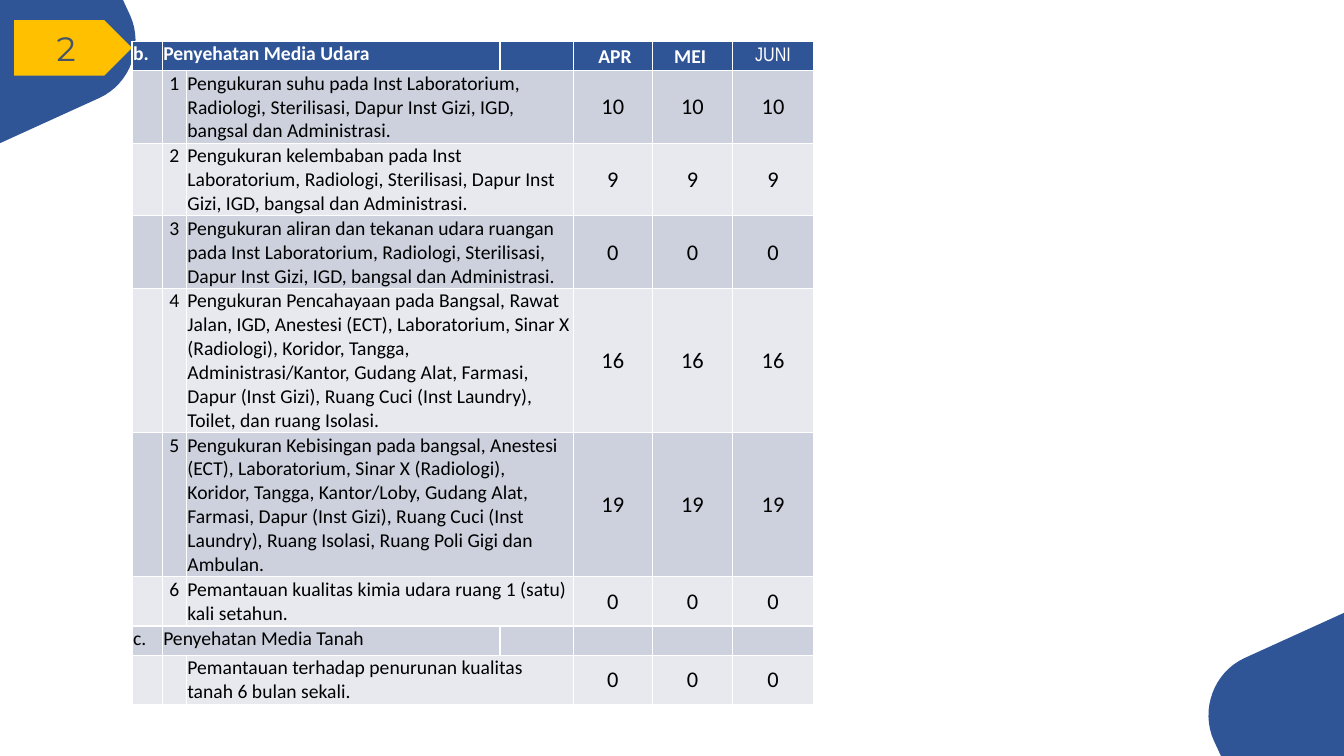
"""Build the slide with the April to June table of air and soil health measurements."""
from dataclasses import dataclass
from typing import Optional

from lxml import etree
from pptx import Presentation, util as u
from pptx.dml.color import RGBColor
from pptx.enum import shapes, text
from pptx.oxml import ns

GRID_COLUMNS, GRID_ROWS = 160, 90
CELL = u.Inches(1) // 12


@dataclass(frozen=True)
class Theme:
    blue: str = "2F5597"
    gold: str = "FFC000"
    slate: str = "44546A"
    white: str = "FFFFFF"
    black: str = "000000"
    bands: tuple = ("E8E9EF", "CDD1DD")
    body_font: str = "Calibri"
    narrow_font: str = "Arial Narrow"
    number_font: str = "Montserrat"
    body_size: float = 14
    value_size: float = 16
    number_size: float = 24.1


@dataclass(frozen=True)
class Style:
    font: str
    size: float
    color: str
    bold: bool = False
    centered: bool = False
    middle: bool = False


@dataclass(frozen=True)
class Row:
    height: float
    label: str = ""
    number: str = ""
    description: str = ""
    values: tuple = ("", "", "")

    @property
    def is_section(self) -> bool:
        return bool(self.label)


THEME = Theme()
BODY = Style(THEME.body_font, THEME.body_size, THEME.black)
NUMBER = Style(THEME.body_font, THEME.body_size, THEME.black, centered=True)
VALUE = Style(THEME.body_font, THEME.value_size, THEME.black, centered=True, middle=True)
HEADING = Style(THEME.body_font, THEME.body_size, THEME.white, bold=True)
MONTH = Style(THEME.body_font, THEME.body_size, THEME.white, True, True, True)
LAST_MONTH = Style(THEME.narrow_font, THEME.body_size, THEME.white, False, True, True)
PAGE_NUMBER = Style(THEME.number_font, THEME.number_size, THEME.slate, False, True, True)

COLUMN_WIDTHS = (3.6, 2.88, 37.32, 8.76, 9.36, 9.6, 9.6)
TABLE_LEFT, TABLE_TOP = 15.72, 4.92
FIRST_VALUE_COLUMN = 4
ROWS = (
    Row(3.48, "b.", description="Penyehatan Media Udara", values=(" APR", "MEI ", "JUNI")),
    Row(8.64, number="1", values=("10",) * 3, description=(
        "Pengukuran suhu pada Inst Laboratorium, Radiologi, Sterilisasi, "
        "Dapur Inst Gizi, IGD, bangsal dan Administrasi.")),
    Row(8.64, number="2", values=("9",) * 3, description=(
        "Pengukuran kelembaban pada Inst Laboratorium, Radiologi, Sterilisasi, "
        "Dapur Inst Gizi, IGD, bangsal dan Administrasi.")),
    Row(8.64, number="3", values=("0",) * 3, description=(
        "Pengukuran aliran dan tekanan udara ruangan pada Inst Laboratorium, Radiologi, "
        "Sterilisasi, Dapur Inst Gizi, IGD, bangsal dan Administrasi.")),
    Row(14.4, number="4", values=("16",) * 3, description=(
        "Pengukuran Pencahayaan pada Bangsal, Rawat Jalan, IGD, Anestesi (ECT), "
        "Laboratorium, Sinar X (Radiologi), Koridor, Tangga, Administrasi/Kantor, "
        "Gudang Alat, Farmasi, Dapur (Inst Gizi), Ruang Cuci (Inst Laundry), "
        "Toilet, dan ruang Isolasi.")),
    Row(14.4, number="5", values=("19",) * 3, description=(
        "Pengukuran Kebisingan pada bangsal, Anestesi (ECT), Laboratorium, "
        "Sinar X (Radiologi), Koridor, Tangga, Kantor/Loby, Gudang Alat, Farmasi, "
        "Dapur (Inst Gizi), Ruang Cuci (Inst Laundry), Ruang Isolasi, "
        "Ruang Poli Gigi dan Ambulan.")),
    Row(5.88, number="6", values=("0",) * 3, description=(
        "Pemantauan kualitas kimia udara ruang 1 (satu) kali setahun.")),
    Row(3.48, "c.", description="Penyehatan Media Tanah"),
    Row(5.88, values=("0",) * 3, description=(
        "Pemantauan terhadap penurunan kualitas tanah 6 bulan sekali.")),
)

CORNER_CURVE = ((15.48, 1.8), (17.16, 5.52), (15.48, 9.96), (11.88, 11.64))
CURVE_STEPS = 16


def grid(cells: float) -> u.Emu:
    """Convert grid cells to a length."""
    return u.Emu(round(cells * CELL))


def curve_point(share: float) -> tuple:
    """Return the point at a share of the corner's cubic curve."""
    rest = 1 - share
    weights = (rest ** 3, 3 * rest ** 2 * share, 3 * rest * share ** 2, share ** 3)
    return tuple(sum(w * p[axis] for w, p in zip(weights, CORNER_CURVE)) for axis in (0, 1))


def paint(shape, color: str) -> None:
    """Give a shape a flat fill without line or shadow."""
    shape.shadow.inherit = False
    shape.fill.solid()
    shape.fill.fore_color.rgb = RGBColor.from_string(color)
    shape.line.fill.background()


def write(paragraph, content: str, style: Style) -> None:
    """Write one styled paragraph."""
    paragraph.text = content
    if style.centered:
        paragraph.alignment = text.PP_ALIGN.CENTER
    for run in paragraph.runs:
        run.font.name = style.font
        run.font.size = u.Pt(style.size)
        run.font.bold = style.bold
        run.font.color.rgb = RGBColor.from_string(style.color)
    if not content:
        etree.SubElement(paragraph._p, ns.qn("a:endParaRPr"), sz=str(round(style.size * 100)))


def draw_corner(slide, turned: bool) -> None:
    """Draw the rounded corner, top left or turned about the slide's centre."""
    curve = [curve_point(step / CURVE_STEPS) for step in range(CURVE_STEPS + 1)]
    points = [(0, 0), (14.64, 0), *curve, (0, 17.04)]
    if turned:
        points = [(GRID_COLUMNS - x, GRID_ROWS - y) for x, y in points]
    outline = [(grid(x), grid(y)) for x, y in points]
    builder = slide.shapes.build_freeform(*outline[0])
    builder.add_line_segments(outline[1:], close=True)
    paint(builder.convert_to_shape(), THEME.blue)


def draw_page_number(slide, number: str) -> None:
    """Draw the gold arrow with the page number."""
    shape = slide.shapes.add_shape(
        shapes.MSO_SHAPE.PENTAGON, grid(1.68), grid(2.4), grid(14.04), grid(6.6))
    paint(shape, THEME.gold)
    shape.text_frame.vertical_anchor = text.MSO_ANCHOR.MIDDLE
    write(shape.text_frame.paragraphs[0], number, PAGE_NUMBER)


def fill_cell(cell, content: str, style: Style, color: str) -> None:
    """Fill one table cell."""
    cell.fill.solid()
    cell.fill.fore_color.rgb = RGBColor.from_string(color)
    cell.margin_left = cell.margin_right = cell.margin_top = u.Inches(0.01)
    cell.margin_bottom = 0
    cell.vertical_anchor = text.MSO_ANCHOR.MIDDLE if style.middle else text.MSO_ANCHOR.TOP
    write(cell.text_frame.paragraphs[0], content, style)


def cell_style(row: int, column: int) -> Style:
    """Choose the text style for a place in the table."""
    if column >= FIRST_VALUE_COLUMN:
        if row:
            return VALUE if not ROWS[row].is_section else BODY
        return LAST_MONTH if column == len(COLUMN_WIDTHS) - 1 else MONTH
    if row == 0:
        return HEADING
    return NUMBER if column == 1 and not ROWS[row].is_section else BODY


def draw_table(slide, color: Optional[str] = None) -> None:
    """Draw the measurement table."""
    frame = slide.shapes.add_table(
        len(ROWS), len(COLUMN_WIDTHS), grid(TABLE_LEFT), grid(TABLE_TOP),
        grid(sum(COLUMN_WIDTHS)), grid(sum(row.height for row in ROWS)))
    table = frame.table
    for column, width in zip(table.columns, COLUMN_WIDTHS):
        column.width = grid(width)
    for index, row in enumerate(ROWS):
        table.rows[index].height = grid(row.height)
        middle = (row.description, "", "") if row.is_section else (row.number, row.description, "")
        color = THEME.bands[index % 2] if index else THEME.blue
        for column, content in enumerate((row.label, *middle, *row.values)):
            fill_cell(table.cell(index, column), content, cell_style(index, column), color)
        start = 1 if row.is_section else 2
        table.cell(index, start).merge(table.cell(index, start + 1))


def main() -> None:
    """Build and save the presentation."""
    presentation = Presentation()
    presentation.slide_width = grid(GRID_COLUMNS)
    presentation.slide_height = grid(GRID_ROWS)
    slide = presentation.slides.add_slide(presentation.slide_layouts[6])
    for turned in (True, False):
        draw_corner(slide, turned)
    draw_page_number(slide, "2")
    draw_table(slide)
    presentation.save("out.pptx")


if __name__ == "__main__":
    main()
